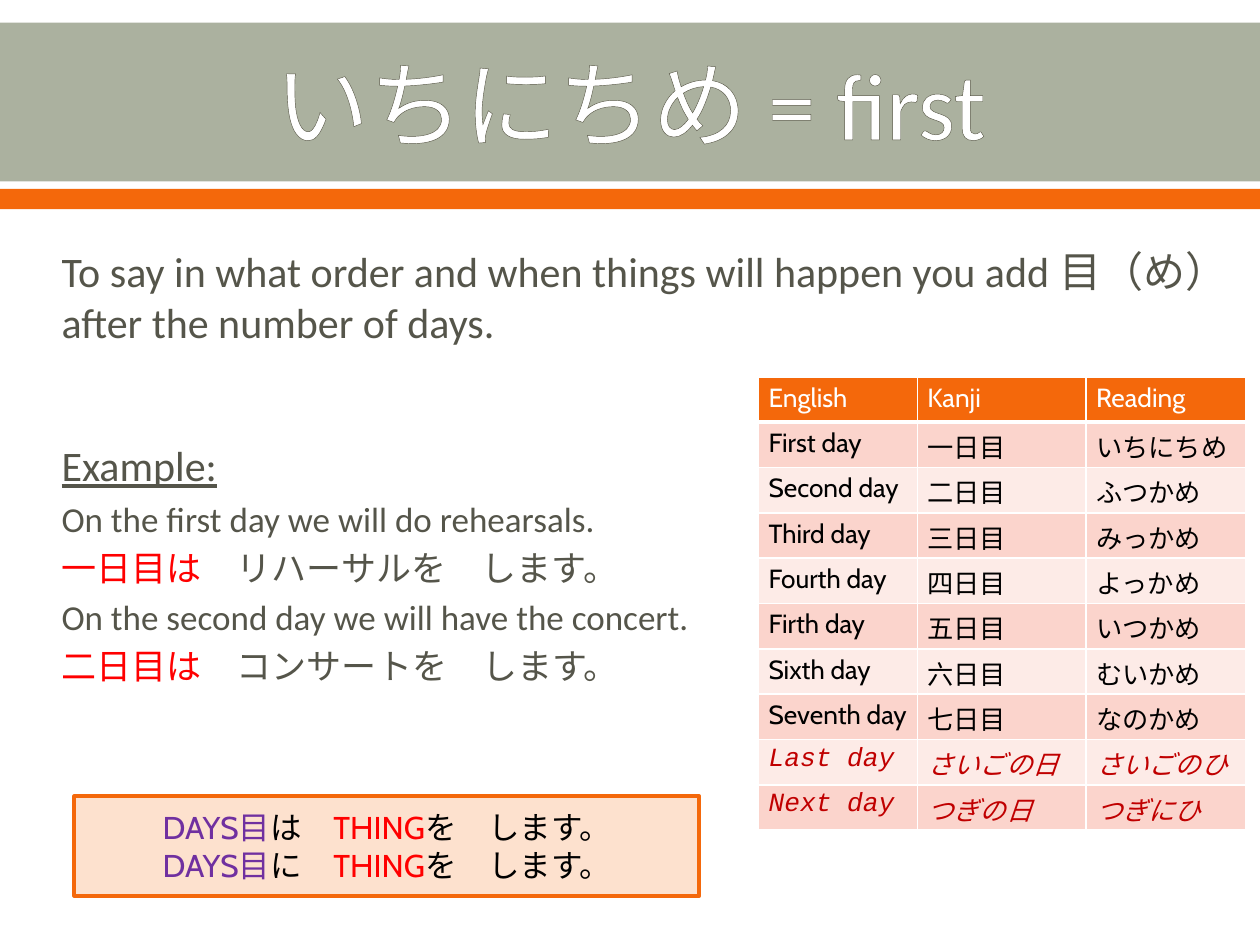
from lxml import etree
from pptx import Presentation
from pptx.dml.color import RGBColor
from pptx.enum.shapes import MSO_SHAPE
from pptx.enum.text import MSO_ANCHOR, PP_ALIGN
from pptx.oxml.ns import qn
from pptx.util import Inches, Pt

RECT = MSO_SHAPE.RECTANGLE
MIDDLE = MSO_ANCHOR.MIDDLE
CENTER = PP_ALIGN.CENTER

COLORS = {
    "sage": "ABB19F", "orange": "F4680B", "white": "FFFFFF", "black": "000000",
    "outline": "585847", "body": "55554A", "red": "FF0000", "purple": "7030A0",
    "peach": "FDE1CE", "dark_red": "C00000", "odd": "FBD4CC", "even": "FDEBE7",
}

# Content: each paragraph is a list of (text, colour) runs
TITLE = [("いちにちめ = first", "white")]
EXPLANATION = [  # runs, size, space before, line spacing, underline
    ([("To say in what order and when things will happen you add 目（め）after the number of days.",
       "body")], 24, 4.8, 1, False),
    ([("Example:", "body")], 24, 39, 1.5, True),
    ([("On the first day we will do rehearsals.", "body")], 20, 4, 1, False),
    ([("一日目は", "red"), ("　リハーサルを　します。", "body")], 20, 4, 1, False),
    ([("On the second day we will have the concert.", "body")], 20, 4, 1, False),
    ([("二日目は", "red"), ("　コンサートを　します。", "body")], 20, 4, 1, False),
]
PATTERNS = [
    [("DAYS目", "purple"), (particle + "　", "black"), ("THING", "red"), ("を　します。", "black")]
    for particle in ("は", "に")
]
DAYS = [
    ("English", "Kanji", "Reading"),
    ("First day", "一日目", "いちにちめ"),
    ("Second day", "二日目", "ふつかめ"),
    ("Third day", "三日目", "みっかめ"),
    ("Fourth day", "四日目", "よっかめ"),
    ("Firth day", "五日目", "いつかめ"),
    ("Sixth day", "六日目", "むいかめ"),
    ("Seventh day", "七日目", "なのかめ"),
    ("Last day", "さいごの日", "さいごのひ"),
    ("Next day", "つぎの日", "つぎにひ"),
]
SPECIAL_ROWS = 2  # closing rows in red italics
DAY_COLUMNS = (1.26, 1.34, 1.27)
DAY_ROW = 0.36


def rgb(name):
    return RGBColor.from_string(COLORS[name])


def inches(*lengths):
    return [Inches(length) for length in lengths]


def add_runs(paragraph, runs, font, size, italic=False, underline=False):
    for text, color in runs:
        run = paragraph.add_run()
        run.text = text
        run.font.name, run.font.size = font, Pt(size)
        run.font.color.rgb = rgb(color)
        if italic:
            run.font.italic = True
        if underline:
            run.font.underline = True


def add_line(parent, tag, color, width):
    line = etree.SubElement(parent, qn(tag), w=str(Pt(width)))
    fill = etree.SubElement(line, qn("a:solidFill"))
    etree.SubElement(fill, qn("a:srgbClr"), val=COLORS[color])
    return line


def add_box(slide, place, fill, line=None):
    box = slide.shapes.add_shape(RECT, *inches(*place))
    box.shadow.inherit = False
    box.fill.solid()
    box.fill.fore_color.rgb = rgb(fill)
    if line:
        box.line.color.rgb, box.line.width = rgb(line), Pt(2.22)
    else:
        box.line.fill.background()
    return box


def add_text(slide, place):
    frame = slide.shapes.add_textbox(*inches(*place)).text_frame
    frame.word_wrap = True
    return frame


def next_paragraph(frame, index):
    return frame.add_paragraph() if index else frame.paragraphs[0]


prs = Presentation()
prs.slide_width, prs.slide_height = inches(10, 7.5)
slide = prs.slides.add_slide(prs.slide_layouts[6])

# Title band and stripe
add_box(slide, (0, 0.18, 10, 1.26), "sage")
add_box(slide, (0, 1.5, 10, 0.16), "orange")
title = add_text(slide, (0.5, 0.2, 9, 1.22))
title.vertical_anchor = MIDDLE
heading = title.paragraphs[0]
heading.alignment = CENTER
add_runs(heading, TITLE, "Calibri", 54)
heading_props = heading.runs[0].font._element
heading_props.insert(0, add_line(heading_props, "a:ln", "outline", 1))

# Explanation and examples
explanation = add_text(slide, (0.39, 1.9, 9.57, 4.41))
for i, (runs, size, before, spacing, underline) in enumerate(EXPLANATION):
    paragraph = next_paragraph(explanation, i)
    paragraph.space_before, paragraph.line_spacing = Pt(before), float(spacing)
    add_runs(paragraph, runs, "Calibri", size, underline=underline)

# Sentence patterns
patterns = add_box(slide, (0.59, 6.32, 4.96, 0.79), "peach", "orange").text_frame
patterns.vertical_anchor = MIDDLE
for i, runs in enumerate(PATTERNS):
    paragraph = next_paragraph(patterns, i)
    paragraph.alignment = CENTER
    add_runs(paragraph, runs, "Cabin", 18)

# Table of days
days = slide.shapes.add_table(
    len(DAYS), len(DAY_COLUMNS),
    *inches(6.02, 2.99, sum(DAY_COLUMNS), DAY_ROW * len(DAYS))).table
for column, width in zip(days.columns, DAY_COLUMNS):
    column.width = Inches(width)
for r, words in enumerate(DAYS):
    days.rows[r].height = Inches(DAY_ROW)
    special = r >= len(DAYS) - SPECIAL_ROWS
    fill = "orange" if r == 0 else "odd" if r % 2 else "even"
    color = "white" if r == 0 else "dark_red" if special else "black"
    font = "Courier New" if special else "Cabin"
    for c, word in enumerate(words):
        cell = days.cell(r, c)
        cell.margin_left = cell.margin_right = Inches(0.08)
        cell.margin_top = cell.margin_bottom = Inches(0.04)
        add_runs(cell.text_frame.paragraphs[0], [(word, color)], font, 15, italic=special)
        # Borders go before the fill in the cell properties
        for side in "LRTB":
            thick = r == 0 and side == "B"
            add_line(cell._tc.get_or_add_tcPr(), "a:ln" + side, "white", 3 if thick else 1)
        cell.fill.solid()
        cell.fill.fore_color.rgb = rgb(fill)

prs.save("out.pptx")
